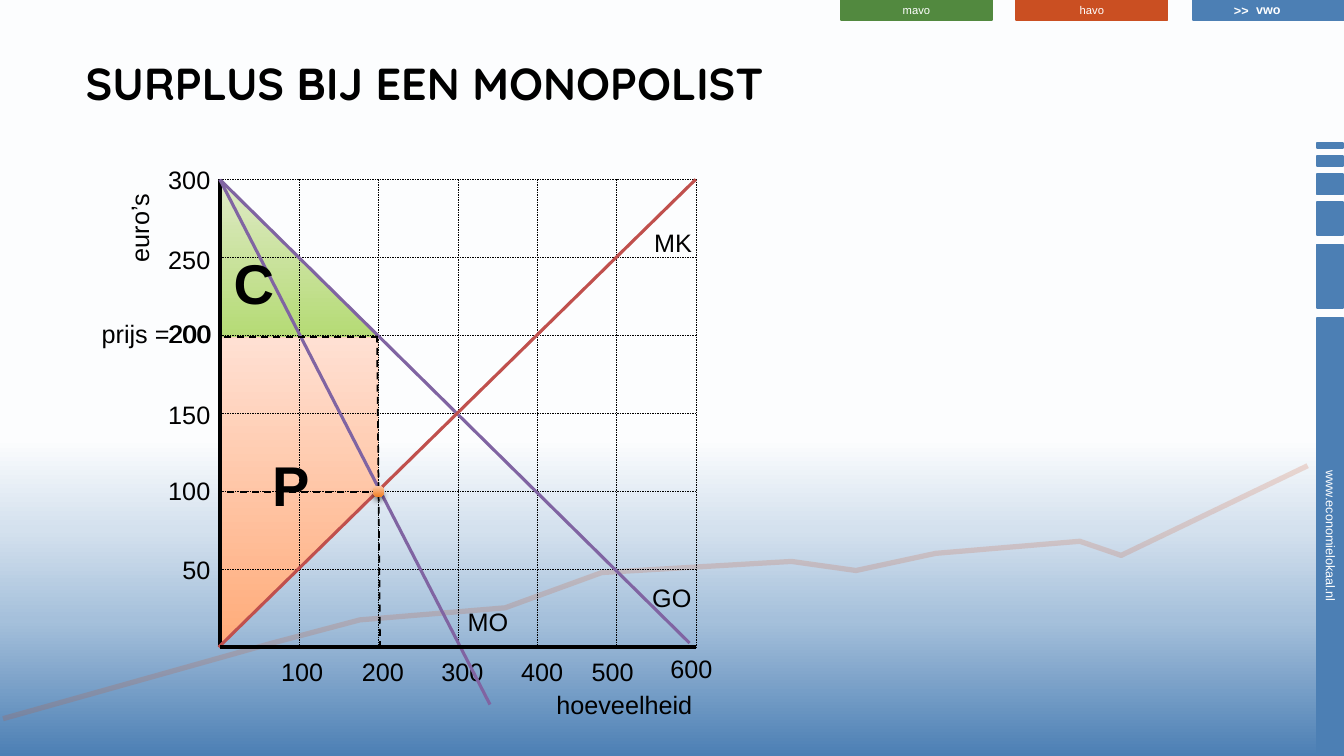
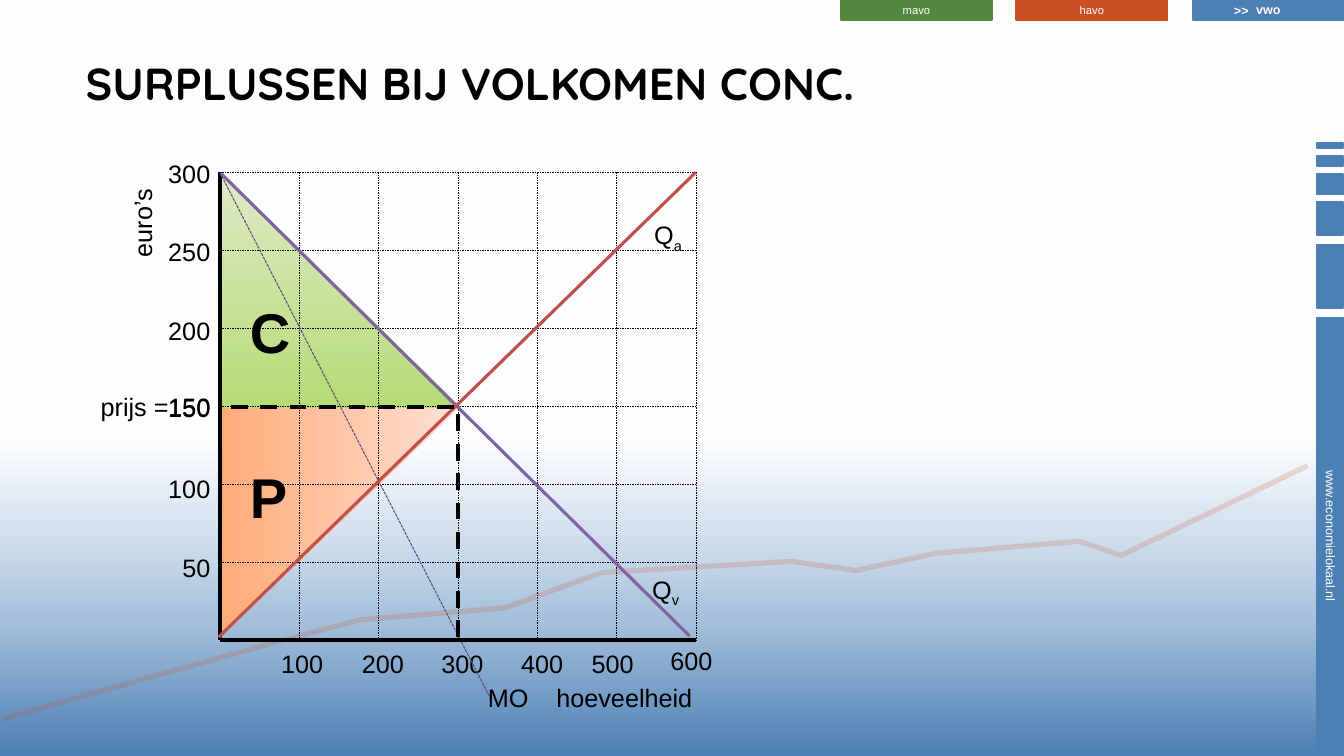
from copy import deepcopy
from dataclasses import dataclass

from lxml import etree
from pptx import Presentation
from pptx.dml.color import RGBColor
from pptx.dml.fill import FillFormat
from pptx.dml.line import LineFormat
from pptx.enum.dml import MSO_LINE
from pptx.enum.shapes import MSO_CONNECTOR, MSO_SHAPE
from pptx.enum.text import MSO_ANCHOR, MSO_AUTO_SIZE, PP_ALIGN
from pptx.oxml.ns import qn
from pptx.shapes.autoshape import Shape
from pptx.slide import Slide, SlideLayout
from pptx.text.text import _Run as Span
from pptx.util import Inches, Pt

DASH = MSO_LINE.DASH
SHORT_DASH = MSO_LINE.SQUARE_DOT
RECTANGLE = MSO_SHAPE.RECTANGLE
TRIANGLE = MSO_SHAPE.RIGHT_TRIANGLE
OVAL = MSO_SHAPE.OVAL
STRAIGHT = MSO_CONNECTOR.STRAIGHT
FIT_SHAPE = MSO_AUTO_SIZE.SHAPE_TO_FIT_TEXT

COLORS = {
    "black": "000000", "white": "FFFFFF",
    "blue": "4C7FB4", "orange": "CA4F22", "green": "52893F",
    "purple": "8064A2", "dark purple": "604A7B", "red": "C0504D",
    "peach edge": "F9B492",
}
SKY = ((0, "4C7FB4"), (0.18, "A5C0DB"), (0.3, "D4E1EE"), (0.42, "FCFDFE"), (0.5, "FFFFFF"))
CONSUMER = ((0, "DFEAC7"), (1, "B5DB75"))
PRODUCER = ((0, "FFE0D3"), (1, "FFAB79"))
POINT = ((0, "FFC9A4"), (1, "EE7E22"))

LEFT, RIGHT, HEIGHT, CELLS = 2.18, 6.9, 4.64, 6
TICK_RIGHT = 2.19
TREND = (
    (12.97, 4.62), (11.12, 5.51), (10.71, 5.37), (9.28, 5.49), (8.49, 5.66), (7.85, 5.57),
    (5.97, 5.68), (5.01, 6.03), (3.57, 6.15), (2.7, 6.38), (0.03, 7.13),
)


@dataclass(frozen=True)
class Box:
    left: float
    top: float
    width: float
    height: float
    rotation: int = 0


@dataclass(frozen=True)
class Label:
    text: str
    left: float
    top: float
    width: float
    height: float = 0.4
    size: int = 18
    bold: bool = False
    color: str = "black"
    rotation: int = 0
    subscript: str = ""
    spacing: int = 0


@dataclass(frozen=True)
class Segment:
    start: tuple[float, float]
    end: tuple[float, float]
    color: str = "black"
    width: float = 0.25
    dash: MSO_LINE | None = None


@dataclass(frozen=True)
class Tab:
    text: str
    box: Box
    color: str
    size: int
    bold: bool = False


@dataclass(frozen=True)
class Graph:
    top: float
    tick_tops: tuple[float, ...]
    quantity_top: float
    cost_end: float
    revenue: Segment
    labels: tuple[Label, ...]


TABS = (
    Tab("www.economielokaal.nl", Box(11.03, 5.19, 4.33, 0.26, 90), "blue", 9),
    Tab("vwo", Box(11.83, 0, 1.5, 0.2), "blue", 9, True),
    Tab("havo", Box(10.08, 0, 1.5, 0.2), "orange", 8),
    Tab("mavo", Box(8.34, 0, 1.5, 0.2), "green", 8),
)
SIDE_BARS = ((2.74, 0.63), (2.17, 0.33), (1.83, 0.2), (1.6, 0.1), (1.44, 0.05))

MONOPOLY = Graph(
    1.78, (1.58, 2.37, 3.11, 3.91, 4.67, 5.45), 6.46, 6.42,
    Segment((LEFT, 1.78), (4.86, 6.99), "purple", 2.25),
    (
        Label("hoeveelheid", 5.42, 6.79, 1.56),
        Label("euro’s", 0.94, 2.06, 0.88, rotation=270),
        Label("prijs =200", 0.91, 3.11, 1.3),
        Label("GO", 6.37, 5.73, 0.59),
        Label("MO", 4.54, 5.97, 0.61),
        Label("MK", 6.39, 2.21, 0.58),
    ),
)
COMPETITION = Graph(
    1.71, (1.52, 2.3, 3.08, 3.84, 4.65, 5.43), 6.38, 6.32,
    Segment((LEFT, 1.71), (4.86, 6.92), "dark purple", 0.75, SHORT_DASH),
    (
        Label("hoeveelheid", 5.42, 6.72, 1.56),
        Label("euro’s", 0.97, 2.01, 0.88, rotation=270),
        Label("prijs =150", 0.9, 3.83, 1.3),
        Label("Q", 6.37, 5.65, 0.48, subscript="v"),
        Label("MO", 4.74, 6.72, 0.61),
        Label("Q", 6.39, 2.13, 0.49, subscript="a"),
    ),
)


def rgb(name: str) -> RGBColor:
    return RGBColor.from_string(COLORS[name])


def format_span(span: Span, size: int, color: str, bold: bool, font: str = "Arial") -> None:
    span.font.name = font
    span.font.size = Pt(size)
    span.font.bold = bold
    span.font.color.rgb = rgb(color)


def set_line(line: LineFormat, color: str, width: float, dash: MSO_LINE | None = None) -> None:
    line.color.rgb = rgb(color)
    line.width = Pt(width)
    if dash is not None:
        line.dash_style = dash


def set_line_opacity(shape: Shape, percent: int) -> None:
    color = shape.element.spPr.find(f"{qn('a:ln')}//{qn('a:srgbClr')}")
    etree.SubElement(color, qn("a:alpha")).set("val", str(percent * 1000))


def set_gradient(fill: FillFormat, stops: tuple[tuple[float, str], ...]) -> None:
    for stop, (position, color) in zip(fill.gradient_stops, stops):
        stop.position = position
        stop.color.rgb = RGBColor.from_string(color)


def add_form(page: Slide, kind: MSO_SHAPE, box: Box) -> Shape:
    shape = page.shapes.add_shape(
        kind, Inches(box.left), Inches(box.top), Inches(box.width), Inches(box.height))
    shape.rotation = box.rotation
    shape.shadow.inherit = False
    return shape


def add_area(page: Slide, kind: MSO_SHAPE, box: Box, stops: tuple[tuple[float, str], ...]) -> Shape:
    shape = add_form(page, kind, box)
    shape.line.fill.background()
    shape.fill.gradient()
    shape.fill.gradient_angle = 270
    set_gradient(shape.fill, stops)
    return shape


def add_bar(page: Slide, box: Box, color: str) -> Shape:
    bar = add_form(page, RECTANGLE, box)
    bar.fill.solid()
    bar.fill.fore_color.rgb = rgb(color)
    set_line(bar.line, color, 1.25)
    return bar


def add_tab(page: Slide, tab: Tab) -> None:
    frame = add_bar(page, tab.box, tab.color).text_frame
    frame.margin_top, frame.margin_bottom = 0, Inches(0.01)
    frame.vertical_anchor = MSO_ANCHOR.MIDDLE
    frame.text = tab.text
    para = frame.paragraphs[0]
    para.alignment = PP_ALIGN.CENTER
    format_span(para.runs[0], tab.size, "white", tab.bold)


def add_outline(page: Slide, points: tuple[tuple[float, float], ...], close: bool) -> Shape:
    corners = [(Inches(x), Inches(y)) for x, y in points]
    builder = page.shapes.build_freeform(*corners[0])
    builder.add_line_segments(corners[1:], close=close)
    shape = builder.convert_to_shape()
    shape.shadow.inherit = False
    return shape


def add_segment(page: Slide, segment: Segment) -> None:
    ends = [Inches(value) for value in (*segment.start, *segment.end)]
    connector = page.shapes.add_connector(STRAIGHT, *ends)
    set_line(connector.line, segment.color, segment.width, segment.dash)
    etree.SubElement(connector.element.spPr, qn("a:effectLst"))


def add_label(page: Slide, label: Label) -> None:
    box = page.shapes.add_textbox(
        Inches(label.left), Inches(label.top), Inches(label.width), Inches(label.height))
    box.rotation = label.rotation
    frame = box.text_frame
    frame.word_wrap = False
    frame.auto_size = FIT_SHAPE
    frame.text = label.text
    para = frame.paragraphs[0]
    if label.subscript:
        para.add_run().text = label.subscript
    for span in para.runs:
        format_span(span, label.size, label.color, label.bold)
        if label.spacing:
            span.font._element.set("spc", str(label.spacing))
    if label.subscript:
        para.runs[-1].font._element.set("baseline", "-25000")


def add_letter(page: Slide, text: str, left: float, top: float) -> None:
    add_label(page, Label(text, left, top, 0.6, 0.77, 40, True, spacing=50))


def prepare_layout(layout: SlideLayout) -> None:
    for holder in list(layout.placeholders)[1:]:
        holder.element.getparent().remove(holder.element)
    title = layout.placeholders[0]
    title.left, title.top = Inches(0.75), Inches(0.5)
    title.width, title.height = Inches(10.02), Inches(0.89)
    fill = layout.background.fill
    fill.gradient()
    fill.gradient_angle = 90
    stop_list = layout.element.find(f".//{qn('a:gsLst')}")
    for _ in SKY[2:]:
        stop_list.append(deepcopy(stop_list[0]))
    set_gradient(fill, SKY)


def add_shared_parts(page: Slide) -> None:
    for tab in TABS:
        add_tab(page, tab)
    for middle, height in SIDE_BARS:
        add_bar(page, Box(13.06, middle - height / 2, 0.26, height), "blue")
    trend = add_outline(page, TREND, False)
    trend.fill.background()
    set_line(trend.line, "orange", 3.75)
    set_line_opacity(trend, 19)
    add_label(page, Label(">>", 12.14, -0.02, 0.35, 0.25, 9, True, "white"))
    for shape in list(page.shapes):
        if not shape.is_placeholder:
            page.slide_layout.shapes.element.append(shape.element)


def set_title(page: Slide, text: str) -> None:
    frame = page.shapes.title.text_frame
    frame.text = text
    frame.vertical_anchor = MSO_ANCHOR.TOP
    frame.auto_size = MSO_AUTO_SIZE.NONE
    para = frame.paragraphs[0]
    para.alignment = PP_ALIGN.LEFT
    format_span(para.runs[0], 32, "black", True, "Quicksand")


def add_graph(page: Slide, graph: Graph) -> None:
    top, bottom = graph.top, graph.top + HEIGHT
    for index in range(CELLS):
        y = top + index * HEIGHT / CELLS
        x = LEFT + (index + 1) * (RIGHT - LEFT) / CELLS
        add_segment(page, Segment((LEFT, y), (RIGHT, y), dash=DASH))
        add_segment(page, Segment((x, top), (x, bottom), dash=DASH))
    add_segment(page, Segment((LEFT, top), (LEFT, bottom), width=3))
    for index, tick_top in enumerate(graph.tick_tops):
        text = str(300 - 50 * index)
        width = 0.62 if len(text) == 3 else 0.48
        add_label(page, Label(text, TICK_RIGHT - width, tick_top, width))
    for index, left in enumerate((2.69, 3.49, 4.28, 5.07, 5.77, 6.55), 1):
        lift = 0.03 if index == CELLS else 0
        add_label(page, Label(str(100 * index), left, graph.quantity_top - lift, 0.62))
    add_segment(page, Segment((2.19, top + 0.01), (6.84, bottom - 0.04), "purple", 2.25))
    add_segment(page, graph.revenue)
    add_segment(page, Segment((2.17, graph.cost_end), (RIGHT, top), "red", 2.25))
    add_segment(page, Segment((RIGHT, bottom), (LEFT, bottom), width=3))
    for label in graph.labels:
        add_label(page, label)


def draw_monopoly(page: Slide) -> None:
    set_title(page, "SURPLUS BIJ EEN MONOPOLIST")
    profit = add_outline(page, ((2.17, 3.35), (3.75, 3.35), (3.75, 4.87), (2.17, 6.4)), True)
    profit.fill.gradient()
    profit.fill.gradient_angle = 270
    set_gradient(profit.fill, PRODUCER)
    set_line(profit.line, "peach edge", 0.75)
    set_line_opacity(profit, 60)
    add_area(page, TRIANGLE, Box(2.17, 1.78, 1.6, 1.56), CONSUMER)
    add_graph(page, MONOPOLY)
    for start, end in (((3.78, 4.88), (2.21, 4.88)), ((3.74, 3.33), (3.77, 6.46)),
                       ((3.75, 3.34), (LEFT, 3.34))):
        add_segment(page, Segment(start, end, width=1.25, dash=DASH))
    point = add_area(page, OVAL, Box(3.7, 4.82, 0.11, 0.11), POINT)
    effects = point.element.spPr.find(qn("a:effectLst"))
    shadow = etree.SubElement(
        effects, qn("a:outerShdw"), blurRad=str(Pt(4)), dist=str(Pt(3)), dir="5400000")
    color = etree.SubElement(shadow, qn("a:srgbClr"), val=COLORS["black"])
    etree.SubElement(color, qn("a:alpha"), val="46000")
    add_letter(page, "P", 2.6, 4.42)
    add_letter(page, "C", 2.22, 2.42)


def draw_competition(page: Slide) -> None:
    set_title(page, "SURPLUSSEN BIJ VOLKOMEN CONC.")
    add_area(page, TRIANGLE, Box(2.23, 3.99, 2.28, 2.38, 90), PRODUCER)
    add_area(page, TRIANGLE, Box(2.18, 1.69, 2.39, 2.36), CONSUMER)
    add_graph(page, COMPETITION)
    for start, end in (((4.54, 4.11), (4.54, 6.43)), ((4.5, 4.04), (2.26, 4.04))):
        add_segment(page, Segment(start, end, width=3, dash=DASH))
    add_letter(page, "C", 2.38, 2.9)
    add_letter(page, "P", 2.38, 4.54)


def main() -> None:
    deck = Presentation()
    deck.slide_width, deck.slide_height = Inches(13.33), Inches(7.5)
    layout = deck.slide_layouts[5]
    prepare_layout(layout)
    pages = [deck.slides.add_slide(layout) for _ in range(2)]
    add_shared_parts(pages[0])
    draw_monopoly(pages[0])
    draw_competition(pages[1])
    deck.save("out.pptx")


if __name__ == "__main__":
    main()
